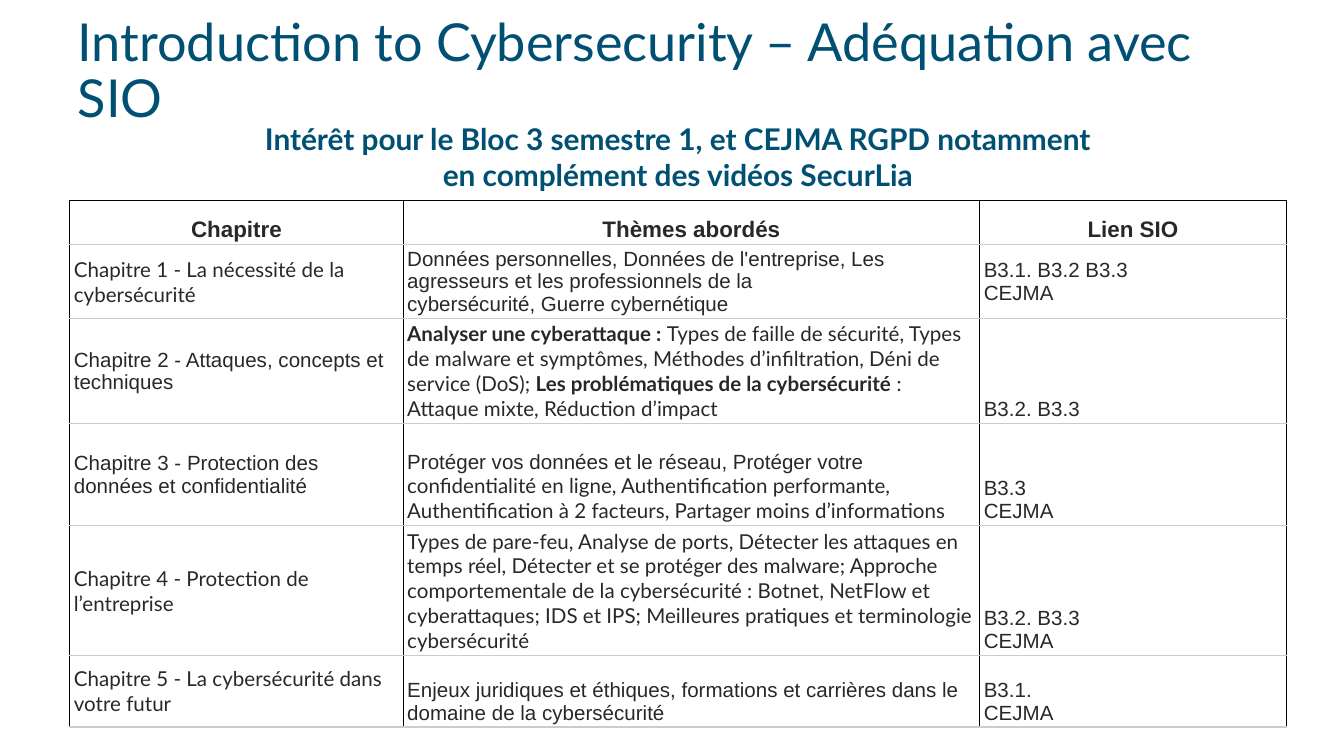
"""Build the slide matching the cybersecurity course chapters to the SIO programme."""
import dataclasses

import lxml.etree
import pptx
import pptx.dml.color
import pptx.enum.text
import pptx.oxml.ns
import pptx.util

Pt = pptx.util.Pt
ANCHOR = pptx.enum.text.MSO_ANCHOR
ALIGN = pptx.enum.text.PP_ALIGN


@dataclasses.dataclass(frozen=True)
class Theme:
    blue: str = "005073"
    ink: str = "282828"
    frame: str = "000000"
    rule: str = "CCCCCC"
    sans: str = "Lato"
    plain: str = "Arial"
    title: int = 28
    subtitle: int = 16
    header: int = 12
    body: int = 11


theme = Theme()


def write(para, spans, name, size, color, bold=False):
    """Fill a paragraph with (text, overrides) spans; a vertical tab breaks the line."""
    para.font.name = name
    para.font.size = Pt(size)
    para.font.bold = bold
    para.font.color.rgb = pptx.dml.color.RGBColor.from_string(color)
    for text, overrides in spans:
        for number, line in enumerate(text.split("\v")):
            if number:
                para.add_line_break()
            span = para.add_run()
            span.text = line
            for key, value in overrides.items():
                setattr(span.font, key, value)


def draw_border(cell, side, color):
    """Draw one side of a cell as a thin solid line."""
    properties = cell._tc.get_or_add_tcPr()
    line = lxml.etree.SubElement(properties, pptx.oxml.ns.qn(f"a:ln{side}"), w=str(Pt(0.75)))
    fill = lxml.etree.SubElement(line, pptx.oxml.ns.qn("a:solidFill"))
    lxml.etree.SubElement(fill, pptx.oxml.ns.qn("a:srgbClr"), val=color)


deck = pptx.Presentation()
deck.slide_width, deck.slide_height = Pt(720), Pt(405)
page = deck.slides.add_slide(deck.slide_layouts[6])

widths = [178.6, 308.9, 164.2]
heights = [23.8, 33.8, 54.7, 54.7, 20.9, 38.2]
headers = ["Chapitre", "Thèmes abordés", "Lien SIO"]
bold = {"bold": True}
sans = {"name": theme.sans}

chapters = [
    (
        ("Chapitre 1 - La nécessité de la cybersécurité", theme.sans, ANCHOR.MIDDLE),
        ([("Données personnelles, Données de l'entreprise, Les agresseurs et les "
           "professionnels de la\vcybersécurité, Guerre cybernétique", {})],
         theme.plain, ANCHOR.MIDDLE),
        (["B3.1. B3.2 B3.3", "CEJMA"], ANCHOR.MIDDLE),
    ),
    (
        ("Chapitre 2 - Attaques, concepts et techniques", theme.plain, ANCHOR.MIDDLE),
        ([("Analyser une cyberattaque : ", bold),
          ("Types de faille de sécurité, Types de malware et symptômes, "
           "Méthodes d’infiltration, Déni de service (DoS); ", {}),
          ("Les problématiques de la cybersécurité ", bold),
          (": Attaque mixte, Réduction d’impact", {})],
         theme.sans, ANCHOR.BOTTOM),
        (["B3.2. B3.3"], ANCHOR.BOTTOM),
    ),
    (
        ("Chapitre 3 - Protection des données et confidentialité", theme.plain, ANCHOR.MIDDLE),
        ([("Protéger vos données et le réseau, Protéger votre ", {}),
          ("confidentialité en ligne, Authentification performante, "
           "Authentification à 2 facteurs, Partager moins d’informations", sans)],
         theme.plain, ANCHOR.BOTTOM),
        (["B3.3", "CEJMA"], ANCHOR.BOTTOM),
    ),
    (
        ("Chapitre 4 - Protection de l’entreprise", theme.sans, ANCHOR.MIDDLE),
        ([("Types de pare-feu, Analyse de ports, Détecter les attaques en temps réel, "
           "Détecter et se protéger des malware; Approche comportementale de la "
           "cybersécurité : Botnet, NetFlow et cyberattaques; IDS et IPS; "
           "Meilleures pratiques et terminologie cybersécurité", {})],
         theme.sans, ANCHOR.BOTTOM),
        (["B3.2. B3.3", "CEJMA"], ANCHOR.BOTTOM),
    ),
    (
        ("Chapitre 5 - La cybersécurité dans votre futur", theme.sans, ANCHOR.MIDDLE),
        ([("Enjeux juridiques et éthiques, formations et carrières dans le domaine "
           "de la cybersécurité", {})],
         theme.plain, ANCHOR.BOTTOM),
        (["B3.1.", "CEJMA"], ANCHOR.BOTTOM),
    ),
]

table_frame = page.shapes.add_table(
    len(heights), len(widths), Pt(37.4), Pt(107.3), Pt(651.7), Pt(283.7))
table = table_frame.table
table.first_row = table.horz_banding = False
for column, width in zip(table.columns, widths):
    column.width = Pt(width)
for row, height in zip(table.rows, heights):
    row.height = Pt(height)
table_frame.height = Pt(283.7)

for row_number, row in enumerate(table.rows):
    for cell in row.cells:
        cell.margin_left = cell.margin_right = Pt(2.2)
        cell.margin_top = cell.margin_bottom = Pt(1.5)
        top = theme.rule if row_number else theme.frame
        for side, color in zip("LRTB", [theme.frame, theme.frame, top, theme.rule]):
            draw_border(cell, side, color)
        cell.fill.background()

for cell, text in zip(table.rows[0].cells, headers):
    cell.vertical_anchor = ANCHOR.BOTTOM
    para = cell.text_frame.paragraphs[0]
    para.alignment = ALIGN.CENTER
    write(para, [(text, {})], theme.plain, theme.header, theme.ink, True)

for row_number, (chapter, topics, links) in enumerate(chapters, 1):
    chapter_text, chapter_font, chapter_anchor = chapter
    topic_spans, topic_font, topic_anchor = topics
    link_lines, link_anchor = links
    contents = [
        ([[(chapter_text, {})]], chapter_font, chapter_anchor),
        ([topic_spans], topic_font, topic_anchor),
        ([[(line, {})] for line in link_lines], theme.plain, link_anchor),
    ]
    for cell, (paragraphs, font, anchor) in zip(table.rows[row_number].cells, contents):
        cell.vertical_anchor = anchor
        for number, spans in enumerate(paragraphs):
            frame = cell.text_frame
            para = frame.add_paragraph() if number else frame.paragraphs[0]
            write(para, spans, font, theme.body, theme.ink)

subtitle = page.shapes.add_textbox(Pt(37.4), Pt(61.2), Pt(651.7), Pt(46)).text_frame
subtitle.word_wrap = True
subtitle.auto_size = pptx.enum.text.MSO_AUTO_SIZE.SHAPE_TO_FIT_TEXT
subtitle.paragraphs[0].alignment = ALIGN.CENTER
write(subtitle.paragraphs[0],
      [("Intérêt pour le Bloc 3 semestre 1, et CEJMA RGPD notamment\v"
        "en complément des vidéos SecurLia", {})],
      theme.sans, theme.subtitle, theme.blue, True)

title = page.shapes.add_textbox(Pt(34.6), Pt(26.6), Pt(657.4), Pt(46)).text_frame
title.word_wrap = True
title.vertical_anchor = ANCHOR.BOTTOM
title.paragraphs[0].line_spacing = 0.9
write(title.paragraphs[0], [("Introduction to Cybersecurity – Adéquation avec SIO", {})],
      theme.sans, theme.title, theme.blue)

deck.save("out.pptx")
